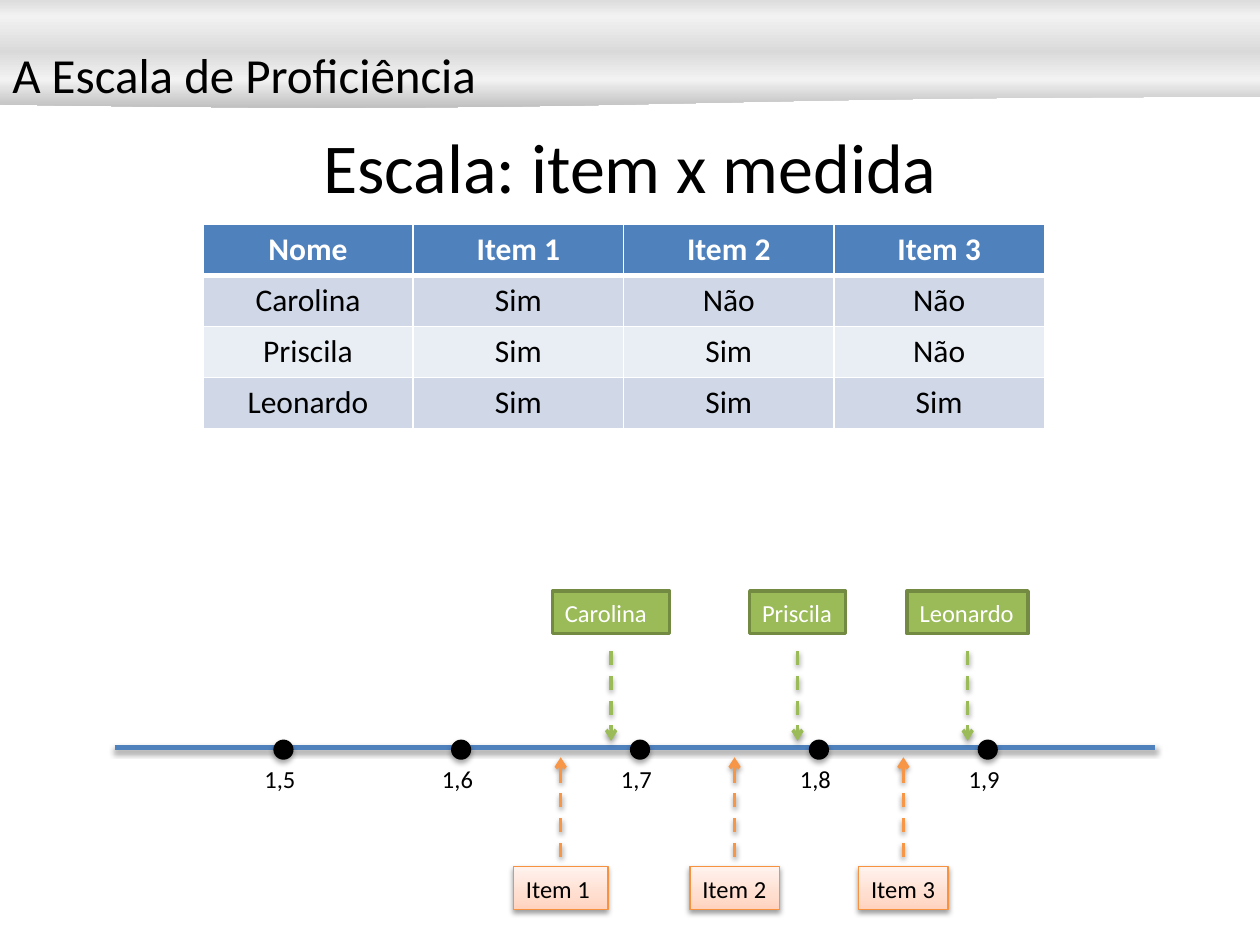
from lxml.etree import SubElement
from pptx import Presentation
from pptx.dml.color import RGBColor
from pptx.enum.dml import MSO_LINE
from pptx.enum.shapes import MSO_CONNECTOR as Link, MSO_SHAPE as Shape
from pptx.enum.text import MSO_ANCHOR as Anchor, PP_ALIGN as Align
from pptx.oxml import parse_xml
from pptx.oxml.ns import nsdecls, qn
from pptx.util import Inches, Pt

SECTION = "A Escala de Proficiência"
TITLE = "Escala: item x medida"
ANSWERS = [
    ("Nome", "Item 1", "Item 2", "Item 3"),
    ("Carolina", "Sim", "Não", "Não"),
    ("Priscila", "Sim", "Sim", "Não"),
    ("Leonardo", "Sim", "Sim", "Sim"),
]
MARKS = [("1,5", 2.25), ("1,6", 3.66), ("1,7", 5.08), ("1,8", 6.5), ("1,9", 7.84)]
ITEMS = [("Item 1", 4.45, 0.75), ("Item 2", 5.83, 0.71), ("Item 3", 7.17, 0.71)]
PEOPLE = [("Carolina", 4.85, 0.93), ("Priscila", 6.33, 0.76), ("Leonardo", 7.68, 0.96)]

COLORS = {
    "text": "000000", "white": "FFFFFF", "axis": "4F81BD",
    "band": "D0D8E8", "light_band": "E9EDF4",
    "person": "9BBB59", "person_edge": "738A42",
    "item": "F79646", "item_edge": "F69240",
}
SILVER = [(0, "D9D9D9"), (50, "F2F2F2"), (100, "BFBFBF")]
PEACH = [(0, "FFD2BD"), (35, "FFDED0"), (100, "FFF2ED")]

WIDTH, HEIGHT = 10, 7.5
AXIS_Y, DOT, TAG_HEIGHT = 5.93, 0.16, 0.34
TABLE_LEFT, TABLE_TOP, COLUMN, ROW = 1.61, 1.78, 1.67, 0.405

deck = Presentation()
deck.slide_width, deck.slide_height = Inches(WIDTH), Inches(HEIGHT)
slide = deck.slides.add_slide(deck.slide_layouts[6])
shapes = slide.shapes


def rgb(name):
    return RGBColor.from_string(COLORS[name])


def write(frame, text, size, color="text", align=Align.LEFT, bold=False):
    frame.text = text
    frame.word_wrap = True
    paragraph = frame.paragraphs[0]
    paragraph.alignment = align
    font = paragraph.runs[0].font
    font.name, font.size, font.bold = "Calibri", Pt(size), bold
    font.color.rgb = rgb(color)


def text_box(text, left, top, width, height, size, **style):
    box = shapes.add_textbox(*map(Inches, (left, top, width, height)))
    write(box.text_frame, text, size, **style)
    box.text_frame.vertical_anchor = Anchor.MIDDLE


def add_form(kind, left, top, width, height, fill=None, edge=None, weight=1):
    form = shapes.add_shape(kind, *map(Inches, (left, top, width, height)))
    form.shadow.inherit = False
    if fill:
        form.fill.solid()
        form.fill.fore_color.rgb = rgb(fill)
    if edge:
        form.line.color.rgb = rgb(edge)
        form.line.width = Pt(weight)
    else:
        form.line.fill.background()
    return form


def shade(form, stops, angle):
    form.fill.background()
    marks = "".join(f'<a:gs pos="{share * 1000}"><a:srgbClr val="{color}"/></a:gs>'
                    for share, color in stops)
    gradient = parse_xml(f'<a:gradFill {nsdecls("a")} rotWithShape="1"><a:gsLst>{marks}'
                         f'</a:gsLst><a:lin ang="{angle * 60000}" scaled="0"/></a:gradFill>')
    properties = form._element.spPr
    properties.replace(properties.find(qn("a:noFill")), gradient)


def cast_shadow(form, alpha, distance):
    properties = form._element.spPr
    effects = properties.find(qn("a:effectLst"))
    if effects is None:
        effects = SubElement(properties, qn("a:effectLst"))
    effects.append(parse_xml(
        f'<a:outerShdw {nsdecls("a")} blurRad="{Pt(3.1)}" dist="{Pt(distance)}" '
        f'dir="5400000" rotWithShape="0"><a:srgbClr val="000000">'
        f'<a:alpha val="{alpha * 1000}"/></a:srgbClr></a:outerShdw>'))


def add_line(start, end, color, weight):
    line = shapes.add_connector(Link.STRAIGHT, *map(Inches, (*start, *end)))
    line.line.color.rgb = rgb(color)
    line.line.width = Pt(weight)
    return line


def add_tag(text, x, width, top, text_color, **look):
    tag = add_form(Shape.RECTANGLE, x - width / 2, top, width, TAG_HEIGHT, **look)
    write(tag.text_frame, text, 14, text_color)
    tag.text_frame.margin_right = 0
    return tag


def add_arrow(x, start, end, color):
    arrow = add_line((x, start), (x, end), color, 2)
    arrow.line.dash_style = MSO_LINE.DASH
    SubElement(arrow.line._get_or_add_ln(), qn("a:tailEnd"), type="arrow")
    cast_shadow(arrow, 38, 1.6)


def add_border(cell, side, weight):
    border = SubElement(cell._tc.get_or_add_tcPr(), qn(f"a:{side}"), w=str(Pt(weight)))
    fill = SubElement(border, qn("a:solidFill"))
    SubElement(fill, qn("a:srgbClr"), val=COLORS["white"])


text_box(TITLE, 0, 0.69, WIDTH, 1.25, 40, align=Align.CENTER)

axis = add_line((0.91, AXIS_Y), (9.17, AXIS_Y), "axis", 3)
cast_shadow(axis, 35, 1.8)
for value, x in MARKS:
    dot = add_form(Shape.OVAL, x - DOT / 2, 5.87, DOT, DOT, "text")
    cast_shadow(dot, 35, 1.8)
    text_box(value, x - 0.25, 6.01, 0.47, TAG_HEIGHT, 14)

for item, x, width in ITEMS:
    tag = add_tag(item, x, width, 6.88, "text", edge="item_edge", weight=0.75)
    shade(tag, PEACH, 270)
    cast_shadow(tag, 38, 1.6)
    add_arrow(x, 6.8, 6.01, "item")

table = shapes.add_table(len(ANSWERS), len(ANSWERS[0]), *map(Inches, (
    TABLE_LEFT, TABLE_TOP, COLUMN * len(ANSWERS[0]), ROW * len(ANSWERS)))).table
for column in table.columns:
    column.width = Inches(COLUMN)
for r, answers in enumerate(ANSWERS):
    table.rows[r].height = Inches(ROW)
    header = r == 0
    fill = "axis" if header else "band" if r % 2 else "light_band"
    for c, answer in enumerate(answers):
        cell = table.cell(r, c)
        write(cell.text_frame, answer, 18, "white" if header else "text", Align.CENTER, header)
        for side in ("lnL", "lnR", "lnT", "lnB"):
            add_border(cell, side, 3 if (r, side) in ((0, "lnB"), (1, "lnT")) else 1)
        cell.fill.solid()
        cell.fill.fore_color.rgb = rgb(fill)

for person, x, width in PEOPLE:
    add_tag(person, x, width, 4.69, "white", fill="person", edge="person_edge", weight=2)
    add_arrow(x, 5.17, 5.88, "person")

upper_wave = add_form(Shape.FLOWCHART_DOCUMENT, 0, -0.16, WIDTH, 0.58)
upper_wave._element.spPr.xfrm.set("flipV", "1")
lower_wave = add_form(Shape.FLOWCHART_DOCUMENT, 0, 0.4, WIDTH, 0.46)
for wave in (upper_wave, lower_wave):
    shade(wave, SILVER, 90)
write(lower_wave.text_frame, SECTION, 28)

deck.save("out.pptx")
